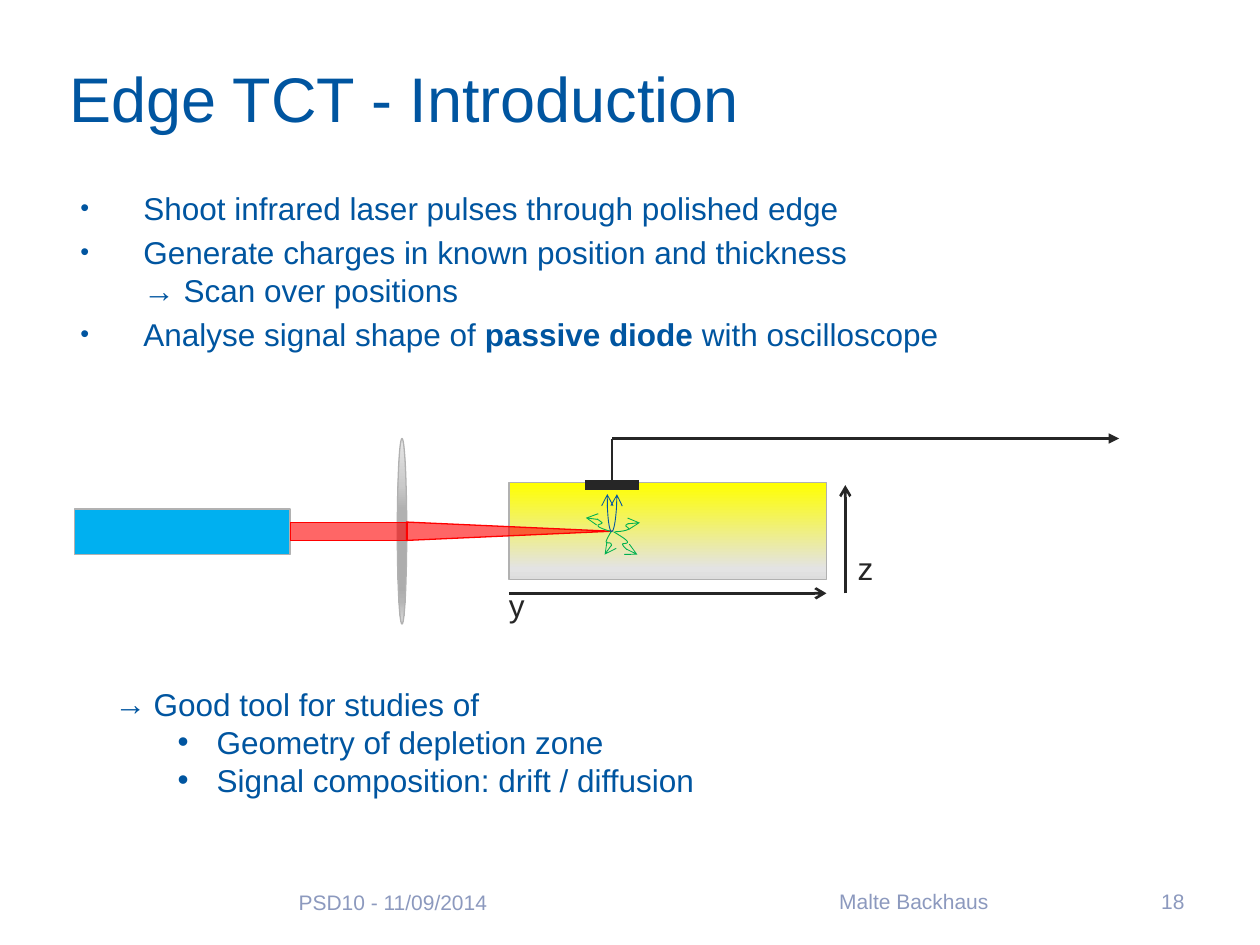
from lxml import etree
from pptx import Presentation
from pptx import util as u
from pptx.dml.color import RGBColor
from pptx.enum import shapes, text
from pptx.oxml.ns import qn

COLORS = {
    "blue": "0055A0", "ink": "262626", "footer": "8C99BE", "outline": "B1B1B1",
    "laser": "00B0F0", "beam": "FF0000", "charge": "00B050",
}
SENSOR_STOPS = [(0, "FFFF00"), (88, "E3E3E3"), (100, "DDDDDD")]
LENS_STOPS = [(0, "E7E7E7"), (25, "CACACA"), (38, "B1B1B1"), (55, "ADADAD"),
              (80, "ACACAC"), (88, "B5B5B5"), (100, "DDDDDD")]
# Drifting charge paths in cm: a start point, then three points per Bezier curve
CHARGE_PATHS = [
    [(12.4, 10.72), (12.52, 10.72), (12.65, 10.69), (12.67, 10.67),
     (12.7, 10.64), (12.6, 10.62), (12.62, 10.59),
     (12.62, 10.57), (12.73, 10.54), (12.75, 10.52),
     (12.8, 10.52), (12.9, 10.54), (12.9, 10.54)],
    [(12.32, 10.72), (12.27, 10.8), (12.22, 10.9), (12.22, 10.92),
     (12.22, 10.97), (12.32, 10.92), (12.32, 10.97),
     (12.34, 11), (12.32, 11.05), (12.29, 11.1),
     (12.27, 11.13), (12.19, 11.18), (12.19, 11.18)],
    [(12.37, 10.72), (12.5, 10.8), (12.62, 10.87), (12.65, 10.92),
     (12.67, 10.97), (12.55, 10.95), (12.55, 10.97),
     (12.55, 11), (12.62, 11.07), (12.67, 11.1),
     (12.73, 11.13), (12.85, 11.18), (12.85, 11.18)],
    [(12.34, 10.72), (12.22, 10.69), (12.09, 10.64), (12.07, 10.62),
     (12.01, 10.57), (12.14, 10.57), (12.14, 10.54),
     (12.12, 10.52), (12.04, 10.46), (11.99, 10.44),
     (11.94, 10.44), (11.81, 10.44), (11.81, 10.44)],
]


def rgb(name):
    return RGBColor.from_string(COLORS[name])


def add_xml(parent, tag, **attributes):
    return etree.SubElement(parent, qn(tag), attributes)


def sample_curve(points, steps=8):
    """Turn a chain of cubic Bezier curves into points along it."""
    samples = [points[0]]
    for i in range(0, len(points) - 1, 3):
        for step in range(1, steps + 1):
            t = step / steps
            weights = ((1 - t) ** 3, 3 * t * (1 - t) ** 2, 3 * t * t * (1 - t), t ** 3)
            samples.append(tuple(
                sum(w * p[axis] for w, p in zip(weights, points[i:i + 4]))
                for axis in (0, 1)))
    return samples


class SlideBuilder:
    font_name = "Arial"

    def __init__(self, deck):
        self.page = deck.slides.add_slide(deck.slide_layouts[5])

    def style_line(self, line, color, width, arrow=None):
        line.color.rgb = rgb(color)
        line.width = u.Pt(width)
        if arrow:
            add_xml(line._get_or_add_ln(), "a:tailEnd", type=arrow)

    def add_spans(self, para, spans, size, color):
        for content, bold in spans:
            span = para.add_run()
            span.text = content
            values = {"name": self.font_name, "size": u.Pt(size), "bold": bold}
            for key, value in values.items():
                setattr(span.font, key, value)
            span.font.color.rgb = rgb(color)

    def title(self, content, *place):
        box = self.page.shapes.title
        for key, value in zip(("left", "top", "width", "height"), place):
            setattr(box, key, u.Cm(value))
        frame = box.text_frame
        for side in ("left", "right", "top", "bottom"):
            setattr(frame, f"margin_{side}", u.Cm(0.13))
        frame.vertical_anchor = text.MSO_ANCHOR.MIDDLE
        frame.paragraphs[0].alignment = text.PP_ALIGN.LEFT
        self.add_spans(frame.paragraphs[0], [(content, False)], 36, "blue")

    def text_box(self, *place, wrap=True, anchor=text.MSO_ANCHOR.TOP):
        frame = self.page.shapes.add_textbox(*map(u.Cm, place)).text_frame
        frame.word_wrap = wrap
        frame.vertical_anchor = anchor
        return frame

    def label(self, content, *place, size=18, color="ink",
              align=text.PP_ALIGN.LEFT, **frame_format):
        para = self.text_box(*place, **frame_format).paragraphs[0]
        para.alignment = align
        self.add_spans(para, [(content, False)], size, color)

    def bullets(self, place, items, gap=0, percent=100):
        """Each item is (bullet, left indent, hanging indent, lines of spans)."""
        frame = self.text_box(*place)
        for i, (bullet, indent, hanging, lines) in enumerate(items):
            para = frame.add_paragraph() if i else frame.paragraphs[0]
            props = para._p.get_or_add_pPr()
            props.set("marL", str(u.Cm(indent)))
            props.set("indent", str(-u.Cm(hanging)))
            add_xml(add_xml(props, "a:buClr"), "a:srgbClr", val=COLORS["blue"])
            add_xml(props, "a:buSzPct", val=str(percent * 1000))
            add_xml(props, "a:buFont", typeface=self.font_name)
            add_xml(props, "a:buChar", char=bullet)
            para.space_before = u.Pt(gap if i else 0)
            for number, spans in enumerate(lines):
                if number:
                    para.add_line_break()
                self.add_spans(para, spans, 18, "blue")

    def shape(self, kind, *place, fill=None, stops=None, alpha=100,
              line="outline", width=0.75, arrow=None, rotation=0):
        shape = self.page.shapes.add_shape(kind, *map(u.Cm, place))
        shape.shadow.inherit = False
        shape.rotation = rotation
        if stops:
            self.gradient(shape, stops)
        elif fill:
            shape.fill.solid()
            shape.fill.fore_color.rgb = rgb(fill)
            color = shape._element.spPr.find(".//" + qn("a:srgbClr"))
            add_xml(color, "a:alpha", val=str(alpha * 1000))
        else:
            shape.fill.background()
        self.style_line(shape.line, line, width, arrow)
        return shape

    def gradient(self, shape, stops):
        """Fill a shape from top to bottom."""
        shape.fill.gradient()
        shape.fill.gradient_angle = 270
        stop_list = shape._element.spPr.find(".//" + qn("a:gsLst"))
        for old in list(stop_list):
            stop_list.remove(old)
        for position, color in stops:
            stop = add_xml(stop_list, "a:gs", pos=str(position * 1000))
            add_xml(stop, "a:srgbClr", val=color)

    def line(self, *ends, width=1.5, arrow=None):
        line = self.page.shapes.add_connector(
            shapes.MSO_CONNECTOR.STRAIGHT, *map(u.Cm, ends))
        self.style_line(line.line, "ink", width, arrow)
        add_xml(line._element.spPr, "a:effectLst")

    def curve(self, points, color):
        start, *rest = [(u.Cm(x), u.Cm(y)) for x, y in sample_curve(points)]
        builder = self.page.shapes.build_freeform(*start)
        builder.add_line_segments(rest, close=False)
        shape = builder.convert_to_shape()
        shape.shadow.inherit = False
        shape.fill.background()
        self.style_line(shape.line, color, 0.5, "arrow")


def main():
    deck = Presentation()
    deck.slide_width, deck.slide_height = u.Cm(25.4), u.Cm(19.05)
    page = SlideBuilder(deck)
    kinds = shapes.MSO_SHAPE

    page.title("Edge TCT - Introduction", 1.27, 0.66, 22.86, 2.62)

    page.shape(kinds.RECTANGLE, 10.26, 9.73, 6.4, 1.96, stops=SENSOR_STOPS)
    page.line(11.79, 9.78, 12.88, 9.78, width=6)
    page.shape(kinds.OVAL, 8.01, 8.84, 0.19, 3.74, stops=LENS_STOPS)
    page.shape(kinds.RECTANGLE, 1.5, 10.26, 4.35, 0.92, fill="laser")
    beam = {"fill": "beam", "alpha": 60, "line": "beam"}
    page.shape(kinds.RECTANGLE, 5.85, 10.53, 2.36, 0.37, **beam)
    page.shape(kinds.ISOSCELES_TRIANGLE, 10.08, 8.64, 0.37, 4.14, rotation=90, **beam)
    page.line(12.34, 9.73, 12.34, 8.84)
    page.line(12.34, 8.84, 22.56, 8.84, arrow="triangle")

    steps = [
        [[("Shoot infrared laser pulses through polished edge", False)]],
        [[("Generate charges in known position and thickness", False)],
         [("→ Scan over positions", False)]],
        [[("Analyse signal shape of ", False), ("passive diode ", True),
          ("with oscilloscope", False)]],
    ]
    page.bullets((1.27, 3.68, 22.86, 12.95),
                 [("•", 1.37, 1.27, lines) for lines in steps], gap=3.6, percent=80)
    studies = [("→", 0.79, "Good tool for studies of"),
               ("•", 2.06, "Geometry of depletion zone"),
               ("•", 2.06, "Signal composition: drift / diffusion")]
    page.bullets((2.06, 13.69, 21.67, 2.57),
                 [(mark, indent, 0.79, [[(line, False)]]) for mark, indent, line in studies])

    for points in CHARGE_PATHS:
        page.curve(points, "charge")
    for flipped in (False, True):
        arc = page.shape(kinds.ARC, 12.24, 9.2, 0.2, 1.52, line="blue",
                         width=0.5, arrow="arrow", rotation=180.7)
        if flipped:
            arc._element.spPr.find(qn("a:xfrm")).set("flipH", "1")

    page.line(10.26, 11.96, 16.66, 11.96, arrow="arrow")
    page.label("y", 10.01, 11.68, 0.84, 1.02, wrap=False)
    page.line(17.04, 11.96, 17.04, 9.78, arrow="arrow")
    page.label("z", 17.04, 10.95, 0.84, 1.02, wrap=False)

    footer = {"size": 12, "color": "footer", "anchor": text.MSO_ANCHOR.MIDDLE}
    page.label("PSD10 - 11/09/2014", 5.77, 17.68, 8.41, 1.02, **footer)
    page.label("Malte Backhaus", 14.4, 17.65, 8.05, 1.02,
               align=text.PP_ALIGN.CENTER, **footer)
    page.label("18", 22.73, 17.65, 1.4, 1.02, align=text.PP_ALIGN.RIGHT, **footer)

    deck.save("out.pptx")


if __name__ == "__main__":
    main()
